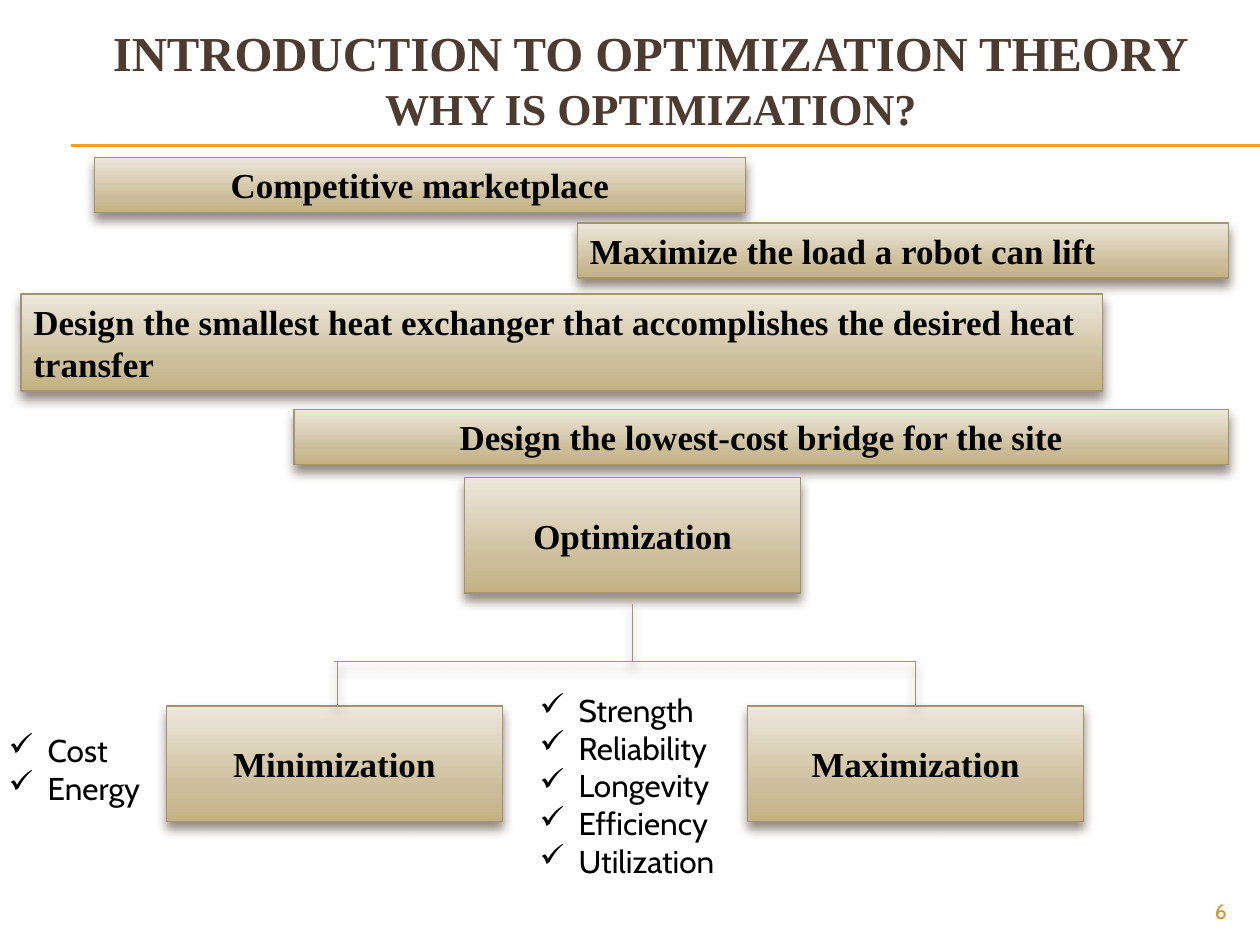
import copy
from collections import namedtuple

import lxml.etree
import pptx
import pptx.dml.color
import pptx.enum.shapes
import pptx.enum.text
import pptx.oxml.ns
import pptx.util

UNIT = pptx.util.Inches(1) / 12
COLUMNS, ROWS = 120, 90
SERIF, SANS = "Times New Roman", "Cabin"
BROWN, GOLD, AMBER, TAN, BLACK = "4E3B30", "F0A22E", "D48F29", "A19574", "000000"
GRADIENT = [(0, "EDE8DC"), (0.72, "CCBD99"), (1, "C4B284")]
ALIGN = pptx.enum.text.PP_ALIGN
ANCHOR = pptx.enum.text.MSO_ANCHOR
Box = namedtuple("Box", "left top width height")


def color(value):
    return pptx.dml.color.RGBColor.from_string(value)


def grid(*values):
    return [pptx.util.Emu(round(value * UNIT)) for value in values]


def add_child(parent, tag, **attributes):
    child = lxml.etree.SubElement(parent, pptx.oxml.ns.qn(tag))
    for name, value in attributes.items():
        child.set(name, str(value))
    return child


def add_effects(shape, shadow):
    effects = add_child(shape._element.spPr, "a:effectLst")
    if shadow:
        outer = add_child(effects, "a:outerShdw", blurRad=pptx.util.Pt(6),
                          dist=pptx.util.Pt(4), dir=90 * 60000, rotWithShape=0)
        add_child(add_child(outer, "a:srgbClr", val=BROWN), "a:alpha", val=60000)


def style_line(shape, value, width):
    shape.line.color.rgb = color(value)
    shape.line.width = pptx.util.Pt(width)


def style_run(run, size, font, value, bold=False):
    run.font.size = pptx.util.Pt(size)
    run.font.name = font
    run.font.bold = bold
    run.font.color.rgb = color(value)


def add_line(slide, start, end, value=TAN, width=0.79, shadow=True):
    line = slide.shapes.add_connector(
        pptx.enum.shapes.MSO_CONNECTOR.STRAIGHT, *grid(*start, *end))
    style_line(line, value, width)
    add_effects(line, shadow)


def add_text(slide, box):
    frame = slide.shapes.add_textbox(*grid(*box)).text_frame
    frame.word_wrap = True
    return frame


def add_panel(slide, box, text, align=ALIGN.CENTER, grow=False):
    shape = slide.shapes.add_shape(
        pptx.enum.shapes.MSO_SHAPE.RECTANGLE, *grid(*box))
    shape.fill.gradient()
    shape.fill.gradient_angle = 270
    stops = shape._element.spPr.find(".//" + pptx.oxml.ns.qn("a:gsLst"))
    stops.append(copy.deepcopy(stops[0]))
    for stop, (position, value) in zip(shape.fill.gradient_stops, GRADIENT):
        stop.position = position
        stop.color.rgb = color(value)
    style_line(shape, TAN, 0.79)
    add_effects(shape, True)
    frame = shape.text_frame
    frame.text = text
    frame.word_wrap = True
    frame.vertical_anchor = ANCHOR.TOP if grow else ANCHOR.MIDDLE
    if grow:
        frame.auto_size = pptx.enum.text.MSO_AUTO_SIZE.SHAPE_TO_FIT_TEXT
    paragraph = frame.paragraphs[0]
    paragraph.alignment = align
    style_run(paragraph.runs[0], 20, SERIF, BLACK, True)


def add_header(slide, box):
    bottom = box.top + box.height
    for rule in (bottom - 0.1, bottom):
        add_line(slide, (6.75, rule), (COLUMNS, rule), GOLD, 0.75, False)
    frame = add_text(slide, box)
    frame.vertical_anchor = ANCHOR.MIDDLE
    paragraph = frame.paragraphs[0]
    paragraph.text = "INTRODUCTION TO OPTIMIZATION THEORY\vWHY IS OPTIMIZATION?"
    paragraph.alignment = ALIGN.CENTER
    for run, size in zip(paragraph.runs, (27.9, 25.2)):
        style_run(run, size, SERIF, BROWN, True)


def add_banners(slide, box):
    banners = [
        (7, 0, 62, 5.25, "Competitive marketplace", ALIGN.CENTER),
        (53, 6.25, 62, 5.25, "Maximize the load a robot can lift", ALIGN.LEFT),
        (0, 13, 103, 9.25, "Design the smallest heat exchanger that accomplishes "
         "the desired heat transfer", ALIGN.LEFT),
        (26, 24, 89, 5.25, "Design the lowest-cost bridge for the site", ALIGN.CENTER),
    ]
    for left, top, width, height, text, align in banners:
        place = Box(box.left + left, box.top + top, width, height)
        add_panel(slide, place, text, align, True)


def add_tree(slide, box):
    width, height = 32, 11
    right = box.left + box.width - width
    child_top = box.top + box.height - height
    root_left = box.left + 28.4
    add_panel(slide, Box(root_left, box.top, width, height), "Optimization")
    add_panel(slide, Box(right, child_top, width, height), "Maximization")
    add_panel(slide, Box(box.left, child_top, width, height), "Minimization")
    stem = root_left + width / 2
    first, last = box.left + width / 2, right + width / 2
    bar = box.top + 17.5
    add_line(slide, (stem, box.top + 12), (stem, bar))
    add_line(slide, (first, bar), (last, bar))
    for drop in (first + 0.3, last):
        add_line(slide, (drop, bar), (drop, child_top))


def add_checklist(slide, box, items):
    frame = add_text(slide, box)
    frame.text = "\n".join(items)
    frame.auto_size = pptx.enum.text.MSO_AUTO_SIZE.SHAPE_TO_FIT_TEXT
    indent = pptx.util.Inches(0.31)
    for paragraph in frame.paragraphs:
        properties = paragraph._p.get_or_add_pPr()
        properties.set("marL", str(indent))
        properties.set("indent", str(-indent))
        add_child(properties, "a:buChar", char="✓")
        style_run(paragraph.runs[0], 18, SANS, BLACK)


def add_page_number(slide, box, number):
    paragraph = add_text(slide, box).paragraphs[0]
    paragraph.text = str(number)
    paragraph.alignment = ALIGN.RIGHT
    style_run(paragraph.runs[0], 12, SANS, AMBER)


def main():
    presentation = pptx.Presentation()
    presentation.slide_width, presentation.slide_height = grid(COLUMNS, ROWS)
    slide = presentation.slides.add_slide(presentation.slide_layouts[6])
    add_header(slide, Box(4, 1, 116, 12.9))
    add_page_number(slide, Box(108, 85, 10, 3.25), 6)
    add_banners(slide, Box(2, 15, 115, 29.25))
    add_tree(slide, Box(15.85, 45.5, 87.35, 32.75))
    add_checklist(slide, Box(50.2, 65.2, 20, 19.4),
                  ["Strength", "Reliability", "Longevity", "Efficiency", "Utilization"])
    add_checklist(slide, Box(-0.35, 69, 15.75, 8.5), ["Cost", "Energy"])
    presentation.save("out.pptx")


if __name__ == "__main__":
    main()
